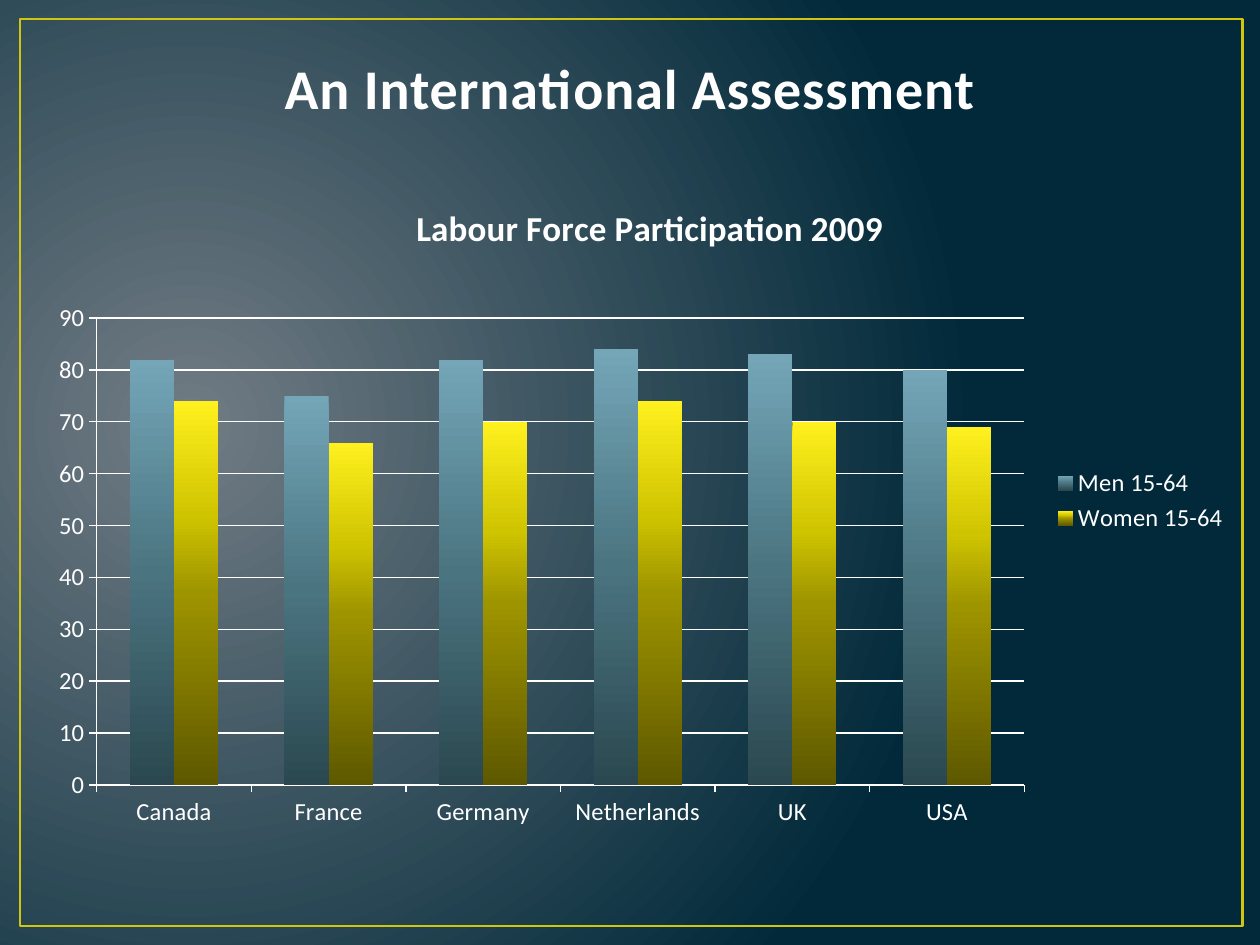
import pptx
import pptx.chart.data
import pptx.dml.color
import pptx.enum.chart
import pptx.enum.shapes
import pptx.enum.text
import pptx.oxml
import pptx.oxml.ns
import pptx.util

Pt = pptx.util.Pt
qn = pptx.oxml.ns.qn
FONT = "Calibri"
COLORS = {
    "glow": "717C84",
    "navy": "01293A",
    "frame": "CFC60D",
    "title": "FEFEFE",
    "chart": "FFFFFF",
}
COUNTRIES = ["Canada", "France", "Germany", "Netherlands", "UK", "USA"]
PARTICIPATION = {
    "Men 15-64": [82, 75, 82, 84, 83, 80],
    "Women 15-64": [74, 66, 70, 74, 70, 69],
}
BAR_STOPS = {
    "Men 15-64": [(0, "74A6B8"), (50, "4A7480"), (100, "2B4850")],
    "Women 15-64": [(0, "FFF01E"), (30, "CFC400"), (50, "9E9400"), (100, "5E5800")],
}
LINEAR = '<a:lin ang="5400000" scaled="0"/>'
CIRCLE = (
    '<a:path path="circle">'
    '<a:fillToRect l="15000" t="50000" r="85000" b="60000"/></a:path>'
)


def color(name):
    return pptx.dml.color.RGBColor.from_string(COLORS[name])


def style_font(font, size, color_name, bold=False):
    font.name = FONT
    font.size = Pt(size)
    font.bold = bold
    font.color.rgb = color(color_name)


def set_gradient(fill, owner, stops, direction):
    fill.gradient()
    old = owner.find(".//" + qn("a:gradFill"))
    stop_xml = "".join(
        f'<a:gs pos="{position * 1000}"><a:srgbClr val="{value}"/></a:gs>'
        for position, value in stops
    )
    new = pptx.oxml.parse_xml(
        f'<a:gradFill {pptx.oxml.ns.nsdecls("a")} rotWithShape="1">'
        f"<a:gsLst>{stop_xml}</a:gsLst>{direction}</a:gradFill>"
    )
    old.getparent().replace(old, new)


def set_layout(element, index, **values):
    for old in element.findall(qn("c:layout")):
        element.remove(old)
    entries = "".join(f'<c:{key} val="{value}"/>' for key, value in values.items())
    layout = pptx.oxml.parse_xml(
        f'<c:layout {pptx.oxml.ns.nsdecls("c")}>'
        f"<c:manualLayout>{entries}</c:manualLayout></c:layout>"
    )
    element.insert(index, layout)


def add_background(slide):
    stops = [(0, COLORS["glow"]), (100, COLORS["navy"])]
    set_gradient(slide.background.fill, slide.element, stops, CIRCLE)


def add_frame(slide):
    frame = slide.shapes.add_shape(
        pptx.enum.shapes.MSO_SHAPE.RECTANGLE, Pt(11.5), Pt(10.8), Pt(698.4), Pt(518.4)
    )
    frame.shadow.inherit = False
    frame.fill.background()
    frame.line.color.rgb = color("frame")
    frame.line.width = Pt(1.5)


def add_title(slide, text):
    box = slide.shapes.add_textbox(Pt(36), Pt(15.8), Pt(648), Pt(56.9))
    text_frame = box.text_frame
    text_frame.word_wrap = True
    text_frame.vertical_anchor = pptx.enum.text.MSO_ANCHOR.BOTTOM
    paragraph = text_frame.paragraphs[0]
    paragraph.alignment = pptx.enum.text.PP_ALIGN.CENTER
    run = paragraph.add_run()
    run.text = text
    style_font(run.font, 32, "title", bold=True)
    run.font._element.set("spc", "50")


def style_axis(axis):
    axis.major_tick_mark = pptx.enum.chart.XL_TICK_MARK.OUTSIDE
    axis.format.line.color.rgb = color("chart")
    axis.format.line.width = Pt(0.75)


def add_chart_title(chart, text):
    title = chart.chart_title
    run = title.text_frame.paragraphs[0].add_run()
    run.text = text
    style_font(run.font, 20, "chart", bold=True)
    set_layout(title._element, 1, xMode="edge", yMode="edge", x=0.31, y=0.05)


def add_participation_chart(slide):
    data = pptx.chart.data.CategoryChartData()
    data.categories = COUNTRIES
    for name, values in PARTICIPATION.items():
        data.add_series(name, values)
    chart = slide.shapes.add_chart(
        pptx.enum.chart.XL_CHART_TYPE.COLUMN_CLUSTERED,
        Pt(20.9), Pt(92.9), Pt(688.3), Pt(386.6), data,
    ).chart
    style_font(chart.font, 14, "chart")
    add_chart_title(chart, "Labour Force Participation 2009")

    style_axis(chart.category_axis)
    value_axis = chart.value_axis
    style_axis(value_axis)
    value_axis.minimum_scale = 0
    value_axis.maximum_scale = 90
    value_axis.major_unit = 10
    value_axis.has_major_gridlines = True
    gridline = value_axis.major_gridlines.format.line
    gridline.color.rgb = color("chart")
    gridline.width = Pt(0.75)

    chart.has_legend = True
    chart.legend.position = pptx.enum.chart.XL_LEGEND_POSITION.RIGHT
    chart.legend.include_in_layout = False

    plot = chart.plots[0]
    plot.gap_width = 150
    plot.overlap = 0
    plot.vary_by_categories = False
    for series in plot.series:
        set_gradient(
            series.format.fill, series._element, BAR_STOPS[series.name], LINEAR
        )
    set_layout(
        plot._element.getparent(), 0, layoutTarget="inner",
        xMode="edge", yMode="edge", x=0.05, y=0.23, w=0.77, h=0.69,
    )


def main():
    presentation = pptx.Presentation()
    presentation.slide_width = Pt(720)
    presentation.slide_height = Pt(540)
    slide = presentation.slides.add_slide(presentation.slide_layouts[6])
    add_background(slide)
    add_frame(slide)
    add_title(slide, "An International Assessment")
    add_participation_chart(slide)
    presentation.save("out.pptx")


if __name__ == "__main__":
    main()
